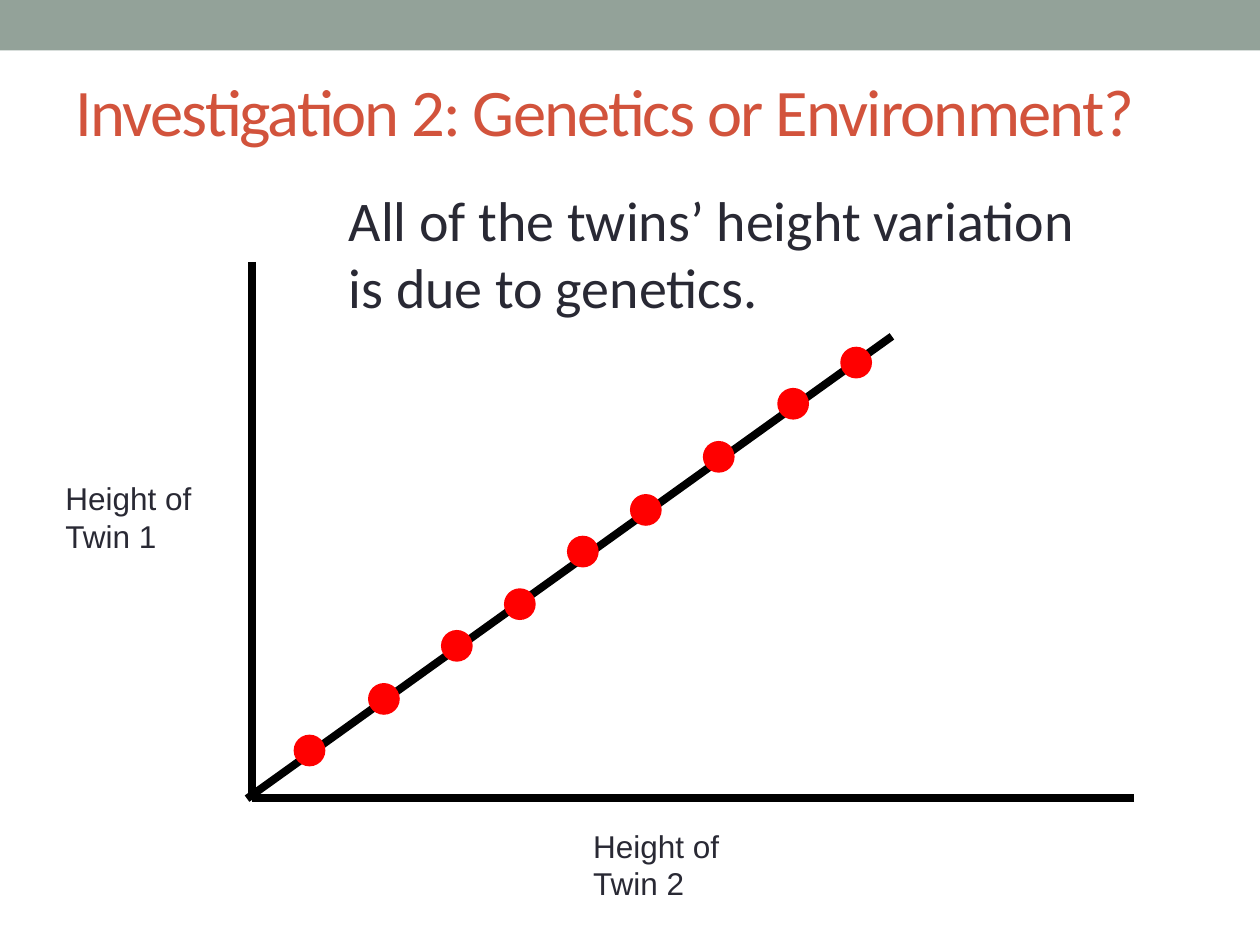
from pptx import Presentation
from pptx.dml.color import RGBColor
from pptx.enum.shapes import MSO_CONNECTOR, MSO_SHAPE
from pptx.enum.text import MSO_ANCHOR, MSO_AUTO_SIZE, PP_ALIGN
from pptx.oxml.ns import qn
from pptx.util import Cm, Pt
from lxml import etree

RECT, OVAL = MSO_SHAPE.RECTANGLE, MSO_SHAPE.OVAL
STRAIGHT = MSO_CONNECTOR.STRAIGHT
MIDDLE, LEFT = MSO_ANCHOR.MIDDLE, PP_ALIGN.LEFT
GROW, NO_FIT = MSO_AUTO_SIZE.SHAPE_TO_FIT_TEXT, MSO_AUTO_SIZE.NONE

BAND = RGBColor(0x93, 0xA2, 0x99)
TITLE = RGBColor(0xD2, 0x53, 0x3C)
INK = RGBColor(0x29, 0x29, 0x34)
BLACK = RGBColor(0, 0, 0)
RED = RGBColor(0xFF, 0, 0)

# Content; all lengths in cm
HEADING = "Investigation 2: Genetics or Environment?"
LABELS = [  # text, (left, top, width, height), font, size
    ("Height of\vTwin 2", (11.71, 16.54, 4.52, 1.8), "Arial", 18),
    ("Height of Twin 1", (1.07, 9.53, 3.18, 1.8), "Arial", 18),
    ("All of the twins’ height variation\vis due to genetics.",
     (6.78, 3.61, 16.08, 3), "Calibri", 32),
]
LINES = [  # x1, y1, x2, y2
    (5.08, 5.28, 5.08, 16.08),    # vertical axis
    (22.86, 16.08, 5.08, 16.08),  # horizontal axis
    (17.98, 6.78, 4.98, 16.1),    # trend
]
DOT = 0.64
DOTS = [  # left, top
    (5.92, 14.81), (7.42, 13.77), (8.89, 12.7),
    (10.16, 11.86), (11.43, 10.8), (12.7, 9.96),
    (14.17, 8.89), (15.67, 7.82), (16.94, 6.99),
]

prs = Presentation()
prs.slide_width, prs.slide_height = Cm(25.4), Cm(19.05)
s = prs.slides.add_slide(prs.slide_layouts[5])


def add_filled(kind, box, color):
    sp = s.shapes.add_shape(kind, *map(Cm, box))
    sp.shadow.inherit = False
    sp.fill.solid()
    sp.fill.fore_color.rgb = color
    sp.line.fill.background()


def write(tf, text, font, size, color):
    tf.word_wrap = True
    p = tf.paragraphs[0]
    p.text = text
    p.alignment = LEFT
    for r in p.runs:
        r.font.name, r.font.size = font, Pt(size)
        r.font.color.rgb = color


# Top band
add_filled(RECT, (0, 0, 25.4, 1.02), BAND)

# Title
title = s.shapes.title
title.left, title.top, title.width, title.height = map(Cm, (1.27, 1.27, 22.86, 1.9))
write(title.text_frame, HEADING, "Calibri", 38, TITLE)
title.text_frame.auto_size = NO_FIT
title.text_frame.vertical_anchor = MIDDLE
for r in title.text_frame.paragraphs[0].runs:
    r.font._element.set("spc", "-100")

# Axes and trend line
for ends in LINES:
    line = s.shapes.add_connector(STRAIGHT, *map(Cm, ends))
    line.line.color.rgb = BLACK
    line.line.width = Pt(4.5)
    etree.SubElement(line._element.spPr, qn("a:effectLst"))

# Twin pairs
for left, top in DOTS:
    add_filled(OVAL, (left, top, DOT, DOT), RED)

# Axis labels and conclusion
for text, box, font, size in LABELS:
    tf = s.shapes.add_textbox(*map(Cm, box)).text_frame
    write(tf, text, font, size, INK)
    tf.auto_size = GROW

prs.save("out.pptx")
